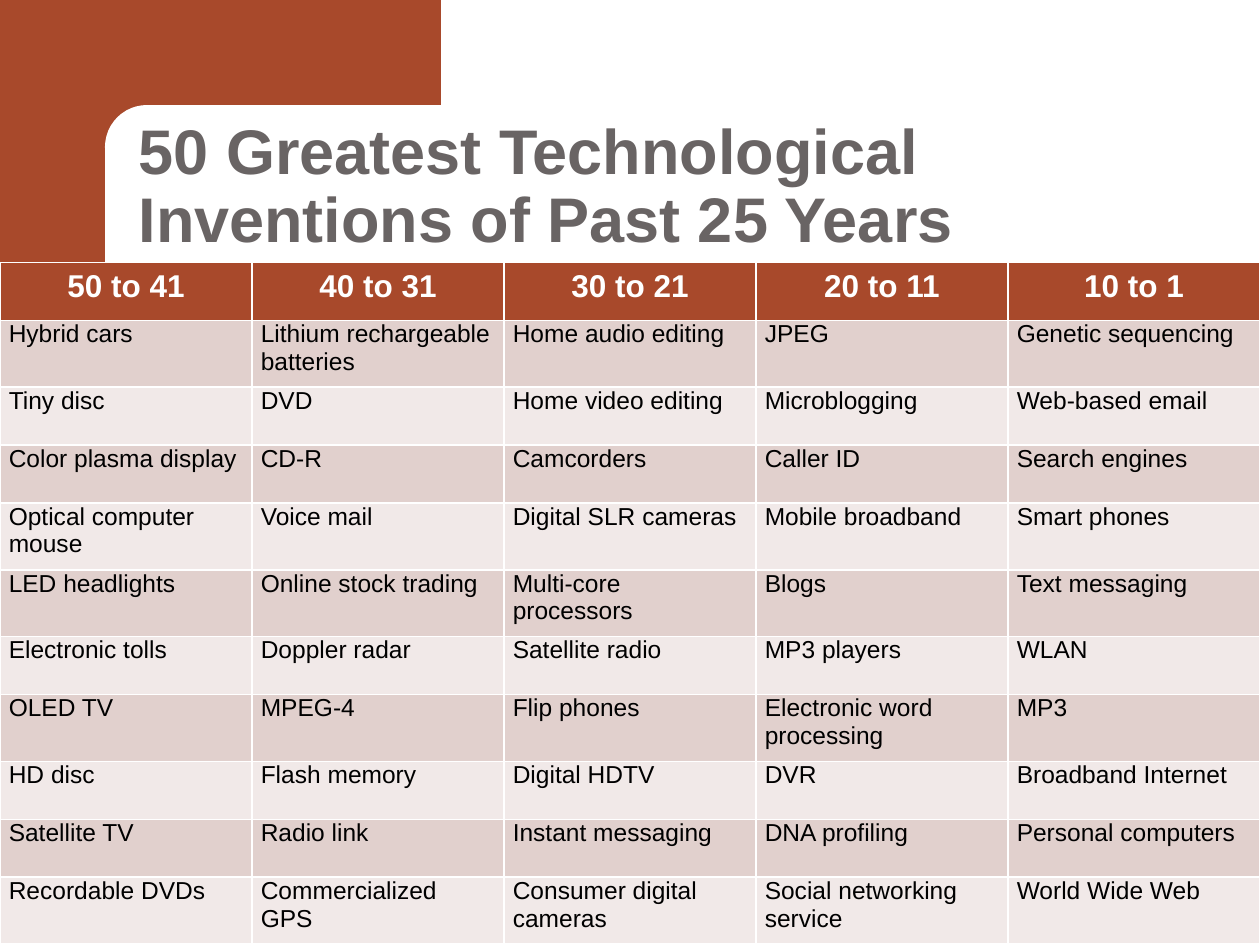
from lxml.etree import SubElement
from pptx import Presentation
from pptx.dml.color import RGBColor
from pptx.enum.shapes import MSO_SHAPE
from pptx.enum.text import MSO_ANCHOR, MSO_AUTO_SIZE, PP_ALIGN
from pptx.oxml.ns import qn
from pptx.util import Inches, Pt

RUST, WHITE, GREY, BLACK = "A8492B", "FFFFFF", "696464", "000000"
BANDS = ["F1E9E8", "E1D0CD"]
SHORT_ROW, TALL_ROW = 0.46, 0.53
TALL_ROWS = {1, 4, 5, 7, 10}

HEADINGS = ["50 to 41", "40 to 31", "30 to 21", "20 to 11", "10 to 1"]
INVENTIONS = [
    ["Hybrid cars", "Lithium rechargeable batteries", "Home audio editing", "JPEG", "Genetic sequencing"],
    ["Tiny disc", "DVD", "Home video editing", "Microblogging", "Web-based email"],
    ["Color plasma display", "CD-R", "Camcorders", "Caller ID", "Search engines"],
    ["Optical computer mouse", "Voice mail", "Digital SLR cameras", "Mobile broadband", "Smart phones"],
    ["LED headlights", "Online stock trading", "Multi-core processors", "Blogs", "Text messaging"],
    ["Electronic tolls", "Doppler radar", "Satellite radio", "MP3 players", "WLAN"],
    ["OLED TV", "MPEG-4", "Flip phones", "Electronic word processing", "MP3"],
    ["HD disc", "Flash memory", "Digital HDTV", "DVR", "Broadband Internet"],
    ["Satellite TV", "Radio link", "Instant messaging", "DNA profiling", "Personal computers"],
    ["Recordable DVDs", "Commercialized GPS", "Consumer digital cameras", "Social networking service",
     "World Wide Web"],
]


def color(value):
    return RGBColor.from_string(value)


def write(frame, text, size=14, ink=BLACK, bold=False, align=PP_ALIGN.LEFT, spacing=None):
    para = frame.paragraphs[0]
    para.alignment = align
    para.line_spacing = spacing
    span = para.add_run()
    span.text = text
    span.font.name = "Arial"
    span.font.size = Pt(size)
    span.font.bold = bold
    span.font.color.rgb = color(ink)


def outline(cell, ink=WHITE, width=1):
    """Draw a line on all four sides of a table cell; call before filling it."""
    properties = cell._tc.get_or_add_tcPr()
    for side in ("a:lnL", "a:lnR", "a:lnT", "a:lnB"):
        line = SubElement(properties, qn(side), w=str(Pt(width)))
        fill = SubElement(line, qn("a:solidFill"))
        SubElement(fill, qn("a:srgbClr"), val=ink)


class SlideBuilder:
    """Places elements on a grid of 12 columns by 9 rows."""

    COLUMNS, ROWS = 12, 9

    def __init__(self, deck):
        self.column = deck.slide_width / self.COLUMNS
        self.row = deck.slide_height / self.ROWS
        self.page = deck.slides.add_slide(deck.slide_layouts[5])

    def area(self, left, top, width, height):
        return (round(left * self.column), round(top * self.row),
                round(width * self.column), round(height * self.row))

    def block(self, place, fill, kind=MSO_SHAPE.RECTANGLE):
        shape = self.page.shapes.add_shape(kind, *self.area(*place))
        shape.shadow.inherit = False
        shape.fill.solid()
        shape.fill.fore_color.rgb = color(fill)
        shape.line.fill.background()
        return shape

    def title(self, place, text):
        box = self.page.shapes.title
        box.left, box.top, box.width, box.height = self.area(*place)
        frame = box.text_frame
        frame.word_wrap = True
        frame.auto_size = MSO_AUTO_SIZE.NONE
        frame.vertical_anchor = MSO_ANCHOR.BOTTOM
        write(frame, text, size=36, ink=GREY, bold=True, spacing=0.9)
        self.page.shapes._spTree.append(box._element)  # in front of the blocks

    def table(self, place, headings, records):
        rows = [headings, *records]
        table = self.page.shapes.add_table(len(rows), len(headings), *self.area(*place)).table
        for index, values in enumerate(rows):
            table.rows[index].height = Inches(TALL_ROW if index in TALL_ROWS else SHORT_ROW)
            for cell, text in zip(table.rows[index].cells, values):
                self.cell(cell, text, index)

    def cell(self, cell, text, index):
        outline(cell)
        cell.fill.solid()
        if index == 0:
            cell.fill.fore_color.rgb = color(RUST)
            write(cell.text_frame, text, size=18, ink=WHITE, bold=True, align=PP_ALIGN.CENTER)
        else:
            cell.fill.fore_color.rgb = color(BANDS[index % 2])
            cell.margin_left = cell.margin_right = Inches(0.07)
            cell.margin_top = cell.margin_bottom = 0
            write(cell.text_frame, text)


def main():
    deck = Presentation()
    deck.slide_width, deck.slide_height = Inches(10), Inches(7.5)
    slide = SlideBuilder(deck)
    slide.block((0, 0, 1, 9), RUST)
    slide.block((0.9, 0, 3.3, 1.4), RUST)
    notch = slide.block((1, 1, 6.7, 0.8), WHITE, MSO_SHAPE.ROUNDED_RECTANGLE)
    notch.adjustments[0] = 0.5
    slide.title((1.2, 1, 10.5, 1.5), "50 Greatest Technological Inventions of Past 25 Years")
    slide.table((0, 2.5, 12, 6.5), HEADINGS, INVENTIONS)
    deck.save("out.pptx")


if __name__ == "__main__":
    main()
